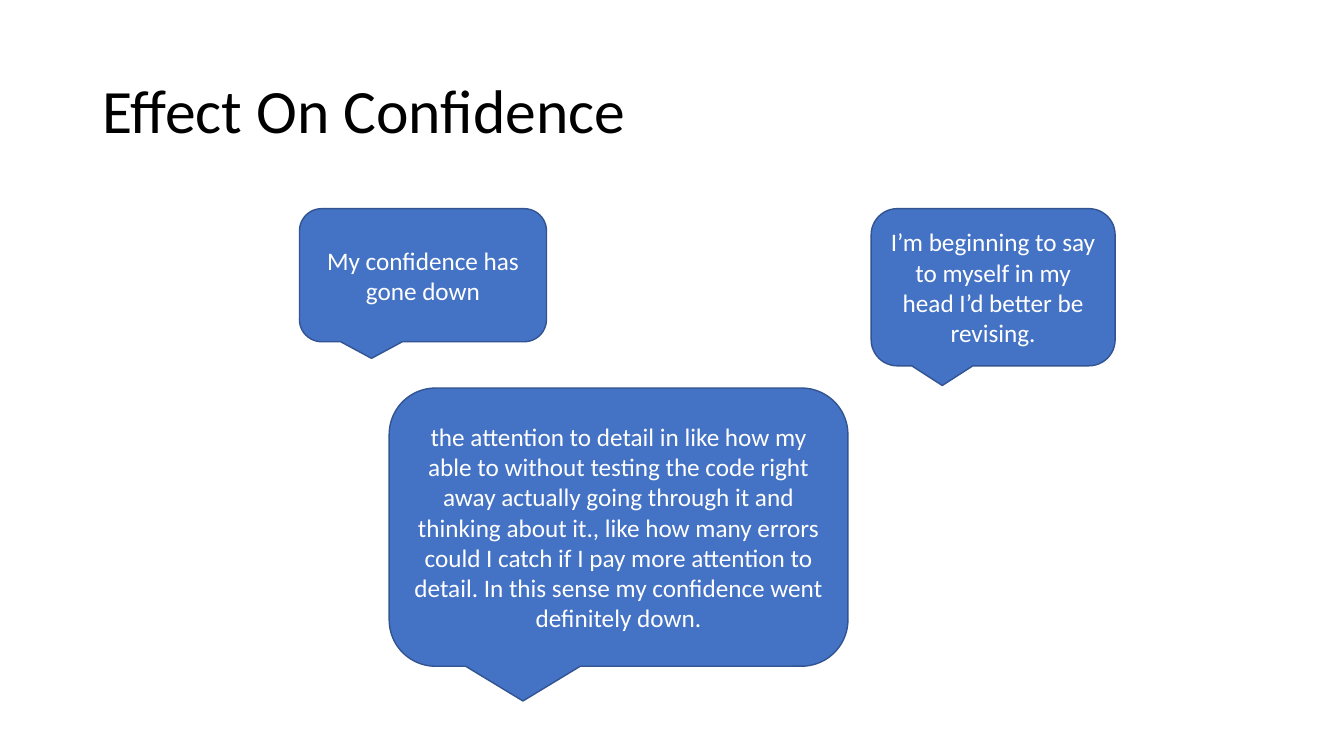
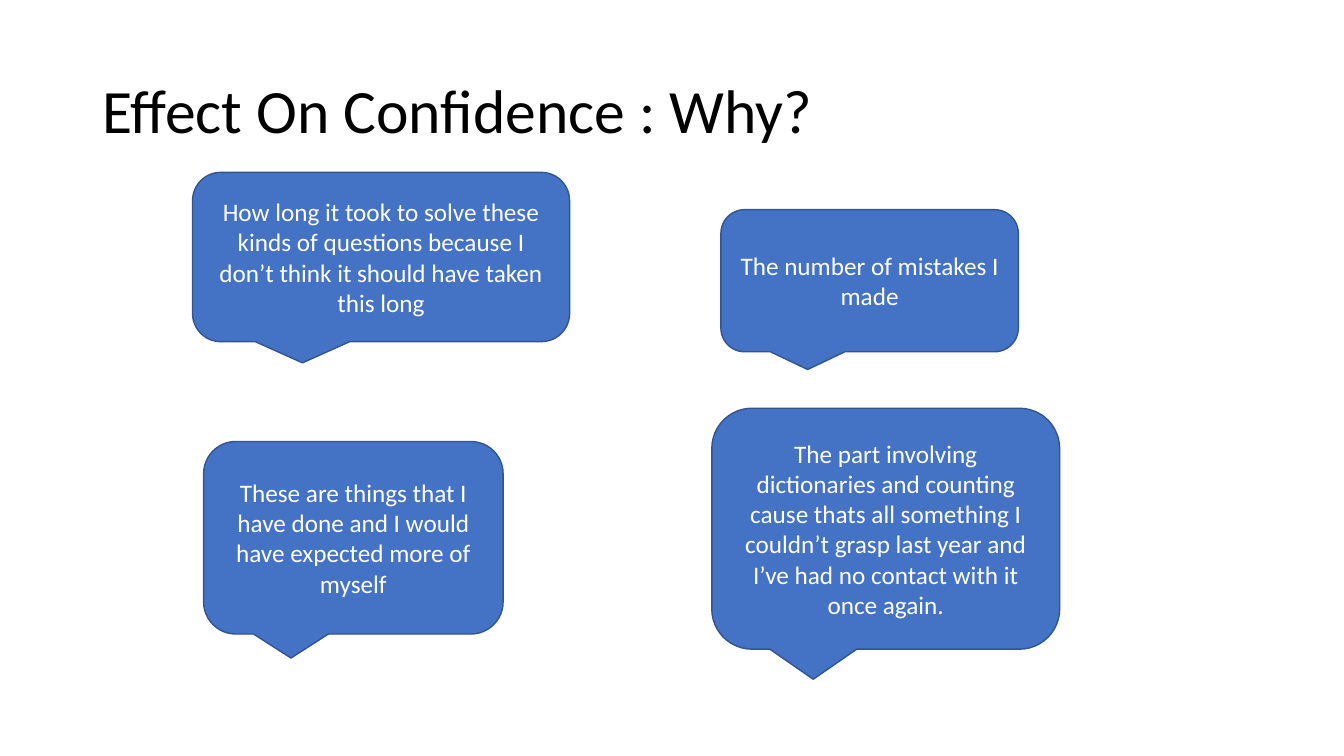
"""Build two slides of speech bubbles on how confidence was affected."""
from pptx import Presentation
from pptx.dml.color import RGBColor
from pptx.enum.shapes import MSO_SHAPE
from pptx.enum.text import MSO_ANCHOR, PP_ALIGN
from pptx.util import Inches, Pt

BUBBLE = MSO_SHAPE.ROUNDED_RECTANGULAR_CALLOUT
MIDDLE = MSO_ANCHOR.MIDDLE
LEFT, CENTER = PP_ALIGN.LEFT, PP_ALIGN.CENTER
BLANK_LAYOUT = 6

FONT = "Calibri"
COLORS = {"title": "000000", "bubble": "4472C4", "outline": "325491", "quote": "FFFFFF"}
TITLE_BOX = (0.92, 0.4, 11.5, 1.45)

SLIDES = [
    ("Effect On Confidence", [
        ((2.97, 2.07, 2.45, 1.32), "My confidence has gone down"),
        ((8.64, 2.07, 2.42, 1.56),
         "I’m beginning to say to myself in my head I’d better be revising."),
        ((3.86, 3.85, 4.55, 2.76),
         "the attention to detail in like how my able to without testing the code "
         "right away actually going through it and thinking about it., like how many "
         "errors could I catch if I pay more attention to detail. In this sense my "
         "confidence went definitely down."),
    ]),
    ("Effect On Confidence : Why?", [
        ((7.06, 4.05, 3.45, 2.39),
         "The part involving dictionaries and counting cause thats all something I "
         "couldn’t grasp last year and I’ve had no contact with it once again."),
        ((7.15, 2.08, 2.95, 1.41), "The number of mistakes I made"),
        ((1.91, 1.71, 3.74, 1.68),
         "How long it took to solve these kinds of questions because "
         "I don’t think it should have taken this long"),
        ((2.02, 4.38, 2.97, 1.91),
         "These are things that I have done and I would have expected "
         "more of myself"),
    ]),
]


def color(name):
    return RGBColor.from_string(COLORS[name])


def write_text(shape, text, size, color_name, alignment):
    frame = shape.text_frame
    frame.word_wrap = True
    frame.vertical_anchor = MIDDLE
    paragraph = frame.paragraphs[0]
    paragraph.text = text
    paragraph.alignment = alignment
    paragraph.font.name = FONT
    paragraph.font.size = Pt(size)
    paragraph.font.color.rgb = color(color_name)
    return paragraph


def add_title(slide, text):
    box = slide.shapes.add_textbox(*map(Inches, TITLE_BOX))
    paragraph = write_text(box, text, 44, "title", LEFT)
    paragraph.line_spacing = 0.9


def add_bubble(slide, bounds, quote):
    bubble = slide.shapes.add_shape(BUBBLE, *map(Inches, bounds))
    bubble.shadow.inherit = False
    bubble.fill.solid()
    bubble.fill.fore_color.rgb = color("bubble")
    bubble.line.color.rgb = color("outline")
    bubble.line.width = Pt(1)
    write_text(bubble, quote, 18, "quote", CENTER)


def main():
    presentation = Presentation()
    presentation.slide_width = Inches(13.33)
    presentation.slide_height = Inches(7.5)
    for title, bubbles in SLIDES:
        slide = presentation.slides.add_slide(presentation.slide_layouts[BLANK_LAYOUT])
        add_title(slide, title)
        for bounds, quote in bubbles:
            add_bubble(slide, bounds, quote)
    presentation.save("out.pptx")


if __name__ == "__main__":
    main()
